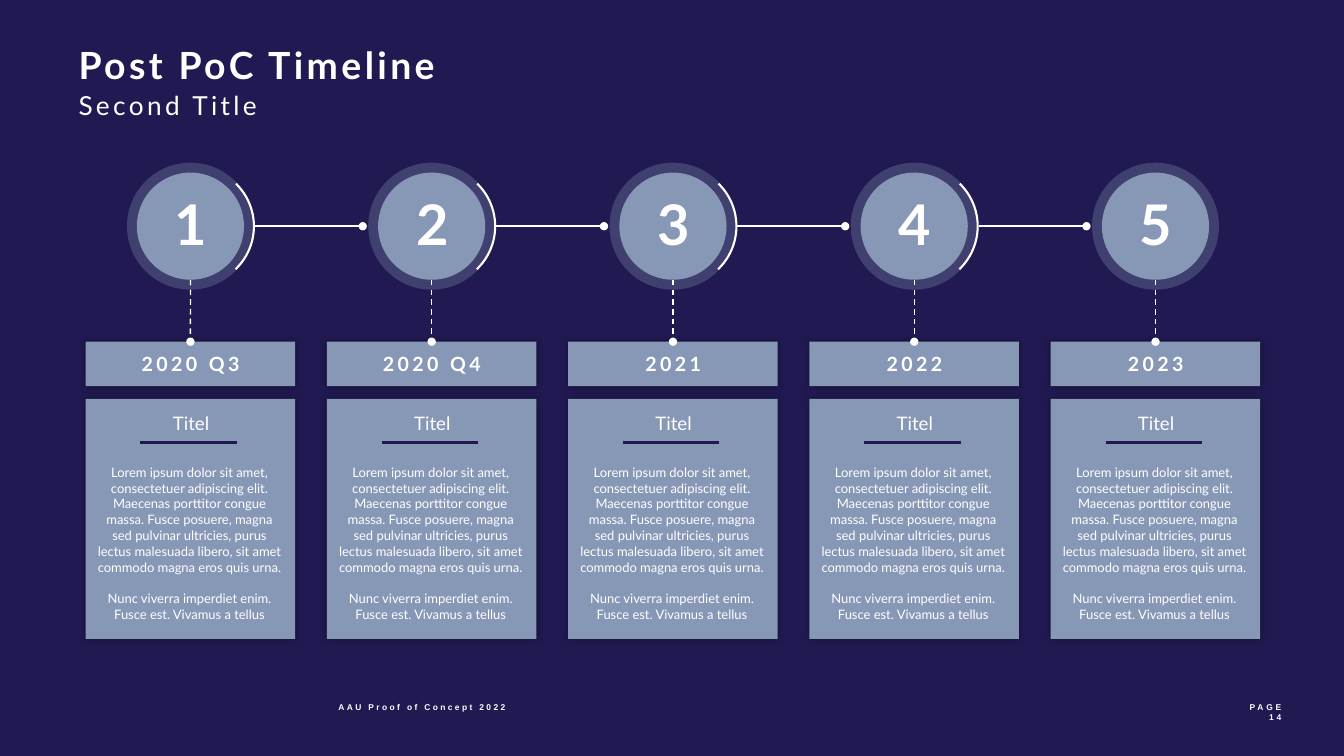
from dataclasses import dataclass

from lxml import etree
from pptx import Presentation
from pptx.dml.color import RGBColor
from pptx.enum.dml import MSO_LINE
from pptx.enum.shapes import MSO_CONNECTOR, MSO_SHAPE
from pptx.enum.text import MSO_ANCHOR, MSO_AUTO_SIZE, PP_ALIGN
from pptx.oxml.ns import qn
from pptx.shapes.autoshape import Shape
from pptx.shapes.connector import Connector
from pptx.slide import Slide
from pptx.util import Cm, Pt

STRAIGHT = MSO_CONNECTOR.STRAIGHT
OVAL, RECT, ARC = MSO_SHAPE.OVAL, MSO_SHAPE.RECTANGLE, MSO_SHAPE.ARC
LEFT, CENTER, RIGHT = PP_ALIGN.LEFT, PP_ALIGN.CENTER, PP_ALIGN.RIGHT
TOP, MIDDLE = MSO_ANCHOR.TOP, MSO_ANCHOR.MIDDLE
DASH = MSO_LINE.DASH
TOP_SITE = 0


@dataclass(frozen=True)
class Theme:
    background: RGBColor = RGBColor(0x21, 0x1A, 0x52)
    panel: RGBColor = RGBColor(0x87, 0x97, 0xB6)
    white: RGBColor = RGBColor(0xFF, 0xFF, 0xFF)
    shadow: str = "000000"
    font: str = "Lato"
    footer_font: str = "Arial"
    title: float = 26.7
    subtitle: float = 18.7
    numeral: float = 40
    period: float = 14
    heading: float = 13.3
    body: float = 9.3
    footer: float = 6
    leading: float = 11.3
    tracking: float = 2.4


@dataclass(frozen=True)
class Stage:
    number: int
    period: str
    has_next: bool = True


THEME = Theme()
STAGES = [
    Stage(1, "2020 Q3"),
    Stage(2, "2020 Q4"),
    Stage(3, "2021"),
    Stage(4, "2022"),
    Stage(5, "2023", has_next=False),
]
HEADING = "Titel"
DESCRIPTION = [
    "Lorem ipsum dolor sit amet, consectetuer adipiscing elit. Maecenas porttitor "
    "congue massa. Fusce posuere, magna sed pulvinar ultricies, purus lectus "
    "malesuada libero, sit amet commodo magna eros quis urna.",
    "Nunc viverra imperdiet enim. Fusce est. Vivamus a tellus",
]

# Lengths in centimetres
FIRST_CENTER, STAGE_STEP = 4.8, 6.08
CIRCLE_Y, HALO, DISC, ARC_SIZE = 5.7, 3.2, 2.7, 3.0
PANEL_WIDTH = 5.28
PERIOD_TOP, PERIOD_HEIGHT = 8.61, 1.12
CARD_TOP, CARD_HEIGHT = 10.05, 6.05


def add_text(slide: Slide, paragraphs: list[str], left: float, top: float,
             width: float, height: float, *, size: float,
             font: str = THEME.font, bold: bool = False, align: PP_ALIGN = LEFT,
             anchor: MSO_ANCHOR = TOP, tracking: float = 0,
             leading: float | None = None, gap: float = 0,
             inset: bool = False, grow: bool = True) -> None:
    """Add white text; gap is the space in points between paragraphs."""
    frame = slide.shapes.add_textbox(Cm(left), Cm(top), Cm(width), Cm(height)).text_frame
    frame.word_wrap = True
    frame.auto_size = MSO_AUTO_SIZE.SHAPE_TO_FIT_TEXT if grow else MSO_AUTO_SIZE.NONE
    frame.vertical_anchor = anchor
    if not inset:
        frame.margin_left = frame.margin_right = 0
        frame.margin_top = frame.margin_bottom = 0
    for index, text in enumerate(paragraphs):
        paragraph = frame.add_paragraph() if index else frame.paragraphs[0]
        paragraph.alignment = align
        if leading:
            paragraph.line_spacing = Pt(leading)
        if index and gap:
            paragraph.space_before = Pt(gap)
        run = paragraph.add_run()
        run.text = text
        run.font.name, run.font.size, run.font.bold = font, Pt(size), bold
        run.font.color.rgb = THEME.white
        if tracking:
            run._r.get_or_add_rPr().set("spc", str(round(tracking * 100)))


def add_panel(slide: Slide, kind: MSO_SHAPE, left: float, top: float,
              width: float, height: float) -> Shape:
    panel = slide.shapes.add_shape(kind, Cm(left), Cm(top), Cm(width), Cm(height))
    panel.shadow.inherit = False
    panel.fill.solid()
    panel.fill.fore_color.rgb = THEME.panel
    panel.line.fill.background()
    return panel


def add_circle(slide: Slide, center: float, diameter: float) -> Shape:
    return add_panel(slide, OVAL, center - diameter / 2, CIRCLE_Y - diameter / 2,
                     diameter, diameter)


def set_alpha(color: etree._Element, percent: int) -> None:
    etree.SubElement(color, qn("a:alpha")).set("val", str(percent * 1000))


def add_shadowed_panel(slide: Slide, center: float, top: float, height: float) -> Shape:
    panel = add_panel(slide, RECT, center - PANEL_WIDTH / 2, top, PANEL_WIDTH, height)
    effects = panel._element.spPr.find(qn("a:effectLst"))
    shadow = etree.SubElement(effects, qn("a:outerShdw"), blurRad=str(Pt(5)),
                              dist="0", dir="0", algn="ctr", rotWithShape="0")
    color = etree.SubElement(shadow, qn("a:srgbClr"), val=THEME.shadow)
    set_alpha(color, 40)
    return panel


def add_line(slide: Slide, x1: float, y1: float, x2: float, y2: float, *,
             color: RGBColor = THEME.white, weight: float = 1.5,
             dash: MSO_LINE | None = None, dot_end: bool = False) -> Connector:
    line = slide.shapes.add_connector(STRAIGHT, Cm(x1), Cm(y1), Cm(x2), Cm(y2))
    line.line.color.rgb = color
    line.line.width = Pt(weight)
    if dash:
        line.line.dash_style = dash
    if dot_end:
        etree.SubElement(line.line._get_or_add_ln(), qn("a:tailEnd"), type="oval")
    etree.SubElement(line._element.spPr, qn("a:effectLst"))
    return line


def add_link(slide: Slide, center: float) -> None:
    """Draw the arc beside a circle and the line towards the next one."""
    add_line(slide, center + 1.62, CIRCLE_Y, center + 4.34, CIRCLE_Y, dot_end=True)
    arc = slide.shapes.add_shape(ARC, Cm(center + 0.1 - ARC_SIZE / 2),
                                 Cm(CIRCLE_Y - ARC_SIZE / 2), Cm(ARC_SIZE), Cm(ARC_SIZE))
    arc.rotation = 270
    arc.adjustments[0], arc.adjustments[1] = 26.57, 81.76
    arc.shadow.inherit = False
    arc.fill.background()
    arc.line.color.rgb = THEME.white
    arc.line.width = Pt(1.5)


def add_stage(slide: Slide, stage: Stage, center: float) -> None:
    halo = add_circle(slide, center, HALO)
    set_alpha(halo._element.spPr.find(qn("a:solidFill"))[0], 30)
    add_circle(slide, center, DISC)
    if stage.has_next:
        add_link(slide, center)

    period_panel = add_shadowed_panel(slide, center, PERIOD_TOP, PERIOD_HEIGHT)
    add_text(slide, [stage.period], center - 2.32, 8.87, 4.65, 0.61, size=THEME.period,
             bold=True, align=CENTER, tracking=THEME.tracking)

    add_shadowed_panel(slide, center, CARD_TOP, CARD_HEIGHT)
    card_left = center - PANEL_WIDTH / 2
    add_text(slide, DESCRIPTION, card_left, 11.57, 5.23, 4.17, size=THEME.body,
             align=CENTER, leading=THEME.leading, gap=THEME.leading, inset=True)
    add_text(slide, [HEADING], card_left + 0.04, 10.43, 5.23, 0.66, size=THEME.heading,
             align=CENTER, leading=THEME.leading, inset=True)
    add_line(slide, center - 1.26, 11.15, center + 1.17, 11.15,
             color=THEME.background, weight=2.25)

    drop = add_line(slide, center, CIRCLE_Y + DISC / 2, center, PERIOD_TOP,
                    weight=1, dash=DASH, dot_end=True)
    drop.end_connect(period_panel, TOP_SITE)
    add_text(slide, [str(stage.number)], center - 0.57, 4.77, 1.17, 1.7,
             size=THEME.numeral, bold=True, align=CENTER, anchor=MIDDLE,
             tracking=THEME.tracking)


def main() -> None:
    deck = Presentation()
    deck.slide_width, deck.slide_height = Cm(33.87), Cm(19.05)
    slide = deck.slides.add_slide(deck.slide_layouts[6])
    slide.background.fill.solid()
    slide.background.fill.fore_color.rgb = THEME.background

    add_text(slide, ["Post PoC Timeline"], 1.98, 1.07, 13.82, 1.14, size=THEME.title,
             bold=True, tracking=THEME.tracking)
    add_text(slide, ["Second Title"], 1.98, 2.24, 7.34, 0.79, size=THEME.subtitle,
             tracking=THEME.tracking)
    for index, stage in enumerate(STAGES):
        add_stage(slide, stage, FIRST_CENTER + index * STAGE_STEP)
    add_text(slide, ["AAU Proof of Concept 2022"], 8.53, 17.68, 5.05, 0.79,
             size=THEME.footer, font=THEME.footer_font, bold=True, tracking=1.7, grow=False)
    add_text(slide, ["PAGE", "14"], 28.35, 17.68, 3.94, 0.79, size=THEME.footer,
             font=THEME.footer_font, bold=True, align=RIGHT, tracking=2, grow=False)
    deck.save("out.pptx")


if __name__ == "__main__":
    main()
